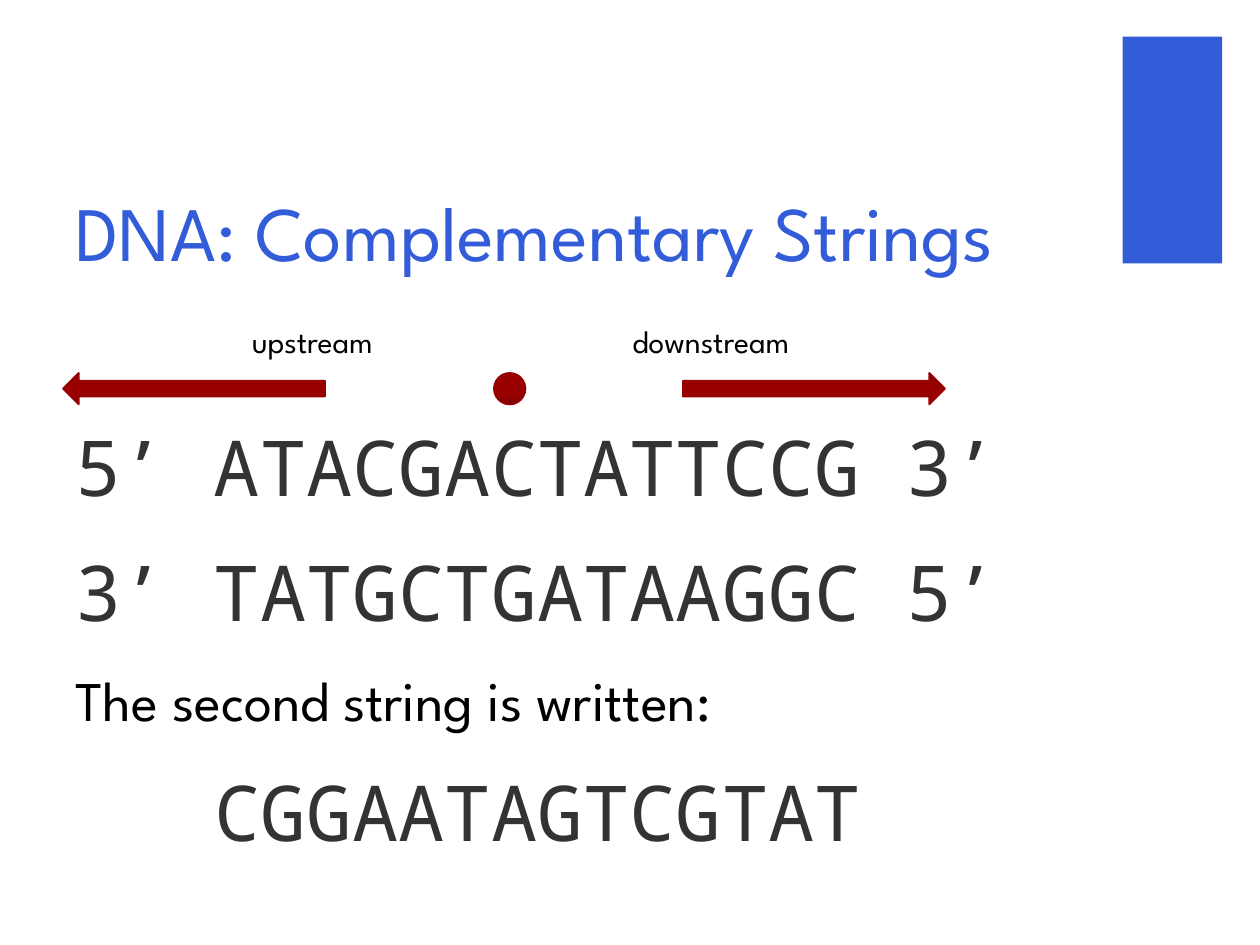
from pptx import Presentation
from pptx.dml.color import RGBColor
from pptx.enum.shapes import MSO_SHAPE
from pptx.enum.text import MSO_ANCHOR
from pptx.util import Inches, Pt

RECTANGLE = MSO_SHAPE.RECTANGLE
LEFT_ARROW = MSO_SHAPE.LEFT_ARROW
OVAL = MSO_SHAPE.OVAL
TOP = MSO_ANCHOR.TOP
BOTTOM = MSO_ANCHOR.BOTTOM


def color(hex_value):
    return RGBColor.from_string(hex_value)


class StrandSlide:
    """Style and drawing methods for the DNA strand slide."""

    SANS, MONO = "League Spartan", "Noto Sans Mono"
    BLUE, BLACK, GREY = "335CD8", "000000", "333333"
    DARK_RED, RED, OUTLINE = "830000", "990000", "960000"

    def __init__(self, slide):
        self.slide = slide

    def shape(self, kind, left, top, width, height):
        shape = self.slide.shapes.add_shape(
            kind, Inches(left), Inches(top), Inches(width), Inches(height))
        shape.shadow.inherit = False
        return shape

    def accent(self, left, top, width, height):
        accent = self.shape(RECTANGLE, left, top, width, height)
        accent.fill.solid()
        accent.fill.fore_color.rgb = color(self.BLUE)
        accent.line.fill.background()

    def marker(self, kind, left, top, width, height, rotation=0):
        marker = self.shape(kind, left, top, width, height)
        marker.rotation = rotation
        marker.fill.gradient()
        marker.fill.gradient_angle = 90
        stops = zip(marker.fill.gradient_stops, (0, 0.35), (self.DARK_RED, self.RED))
        for stop, position, shade in stops:
            stop.position = position
            stop.color.rgb = color(shade)
        marker.line.color.rgb = color(self.OUTLINE)
        marker.line.width = Pt(1)

    def frame(self, left, top, width, height, anchor=TOP):
        box = self.slide.shapes.add_textbox(
            Inches(left), Inches(top), Inches(width), Inches(height))
        box.text_frame.word_wrap = True
        box.text_frame.vertical_anchor = anchor
        return box.text_frame

    def set_text(self, paragraph, text, size, font, shade):
        paragraph.text = text
        style = paragraph.runs[0].font
        style.size, style.name = Pt(size), font
        style.color.rgb = color(shade)

    def label(self, text, left, top, width, height, size, shade, anchor=TOP):
        frame = self.frame(left, top, width, height, anchor)
        self.set_text(frame.paragraphs[0], text, size, self.SANS, shade)

    def strands(self, lines, left, top, width, height):
        frame = self.frame(left, top, width, height)
        for number, (text, is_sequence, indent) in enumerate(lines):
            paragraph = frame.add_paragraph() if number else frame.paragraphs[0]
            if is_sequence:
                self.set_text(paragraph, text, 44, self.MONO, self.GREY)
            else:
                self.set_text(paragraph, text, 32, self.SANS, self.BLACK)
            paragraph.line_spacing = Pt(53 if is_sequence else 37)
            paragraph.space_before = Pt(18 if number else 0)
            paragraph._p.get_or_add_pPr().set("marL", str(Inches(indent)))


def main():
    presentation = Presentation()
    presentation.slide_width, presentation.slide_height = Inches(10), Inches(7.5)
    strand = StrandSlide(presentation.slides.add_slide(presentation.slide_layouts[6]))

    strand.accent(8.91, 0.29, 0.79, 1.8)
    strand.strands([
        ("5’ ATACGACTATTCCG 3’", True, 0),
        ("3’ TATGCTGATAAGGC 5’", True, 0),
        ("The second string is written:", False, 0),
        ("CGGAATAGTCGTAT", True, 1.1),
    ], 0.5, 3.28, 8.08, 3.5)
    strand.label("DNA: Complementary Strings", 0.5, 1, 8.08, 1.25, 44, strand.BLUE, BOTTOM)

    directions = [("upstream", 1.9, 1.36, 0.5, 0), ("downstream", 4.92, 1.74, 5.42, 180)]
    for name, label_left, label_width, arrow_left, rotation in directions:
        strand.marker(LEFT_ARROW, arrow_left, 2.96, 2.08, 0.25, rotation)
        strand.label(name, label_left, 2.51, label_width, 0.4, 18, strand.BLACK)
    strand.marker(OVAL, 3.92, 2.96, 0.25, 0.25)

    presentation.save("out.pptx")


if __name__ == "__main__":
    main()
